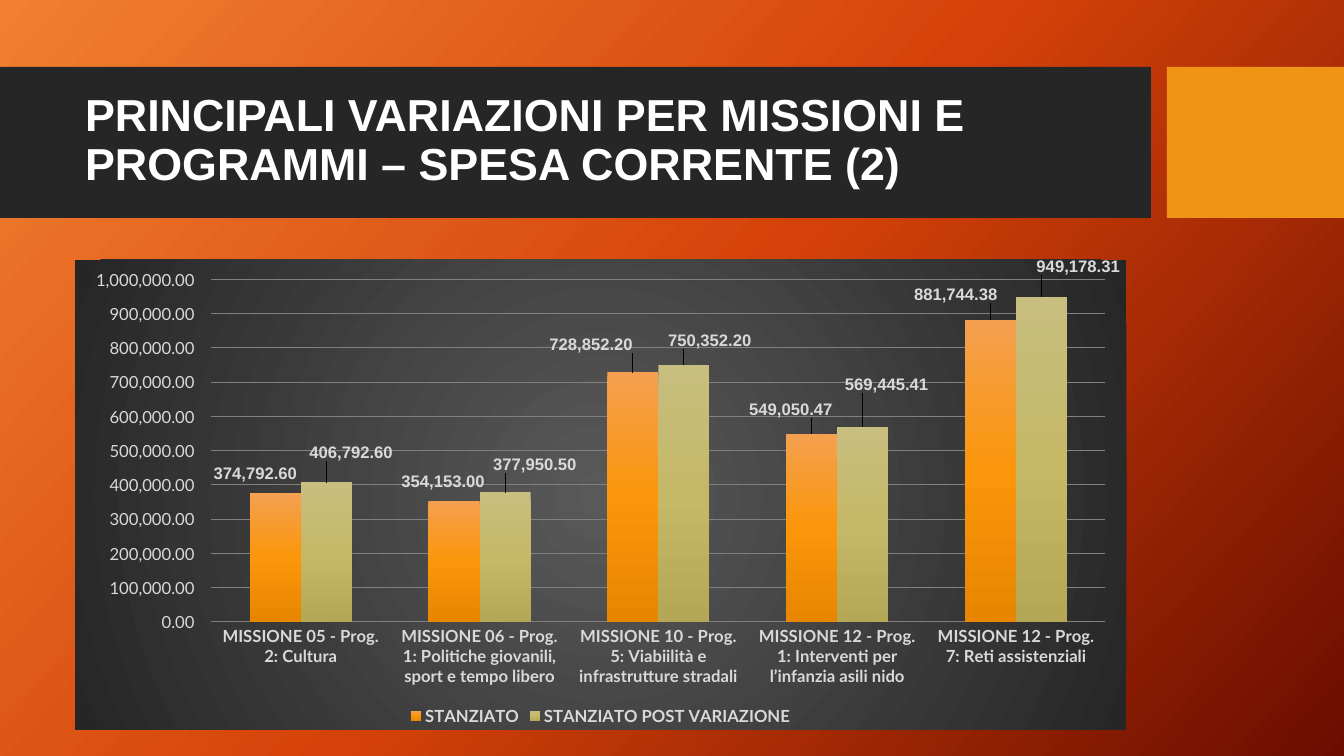
from pptx import Presentation
from pptx import util as u
from pptx.chart.data import CategoryChartData
from pptx.dml.color import RGBColor
from pptx.enum import chart as charts, shapes, text
from pptx.oxml import parse_xml
from pptx.oxml.ns import nsdecls

PX = 12192000 / 1344
DARK = RGBColor(0x26, 0x26, 0x26)
AMBER = RGBColor(0xF0, 0x94, 0x15)
WHITE = RGBColor(0xFF, 0xFF, 0xFF)
PALE = RGBColor(0xD9, 0xD9, 0xD9)
GRID = RGBColor(0x80, 0x80, 0x80)
ASH = RGBColor(0x59, 0x59, 0x59)
SUNSET = [(0, RGBColor(0xF1, 0x80, 0x31)), (50, RGBColor(0xD5, 0x42, 0x09)),
          (100, RGBColor(0x6A, 0x0D, 0x00))]
ORANGE = [(0, RGBColor(0xF4, 0xA0, 0x50)), (50, RGBColor(0xFB, 0x96, 0x0A)),
          (100, RGBColor(0xE8, 0x86, 0x00))]
OLIVE = [(0, RGBColor(0xC8, 0xBE, 0x7F)), (50, RGBColor(0xC5, 0xB8, 0x67)),
         (100, RGBColor(0xB4, 0xA7, 0x56))]

AMOUNT = r"#,##0.00\ _€"
TITLE = "PRINCIPALI VARIAZIONI PER MISSIONI E PROGRAMMI – SPESA CORRENTE (2)"
PROGRAMMES = [
    "MISSIONE 05 - Prog. 2: Cultura",
    "MISSIONE 06 - Prog. 1: Politiche giovanili, sport e tempo libero",
    "MISSIONE 10 - Prog. 5: Viabiilità e infrastrutture stradali",
    "MISSIONE 12 - Prog. 1: Interventi per l’infanzia asili nido",
    "MISSIONE 12 - Prog. 7: Reti assistenziali",
]
SERIES = [
    ("STANZIATO", [374792.6, 354153, 728852.2, 549050.47, 881744.38], ORANGE,
     [(-13, -7), (-4, -6), (-35, -15), (-14, -11), (-28, -12)]),
    ("STANZIATO POST VARIAZIONE",
     [406792.6, 377950.5, 750352.2, 569445.41, 949178.31], OLIVE,
     [(32, -17), (37, -15), (33, -11), (31, -29), (44, -17)]),
]


def emu(*lengths):
    """Turn px lengths into EMU."""
    return [u.Emu(round(length * PX)) for length in lengths]


def gradient(stops, angle=None):
    """Return a gradient fill: linear at an angle, or circular without one."""
    marks = "".join(f'<a:gs pos="{pos * 1000}"><a:srgbClr val="{color}"/></a:gs>'
                    for pos, color in stops)
    if angle is None:
        course = ('<a:path path="circle"><a:fillToRect l="50000" t="50000" '
                  'r="50000" b="50000"/></a:path>')
    else:
        course = f'<a:lin ang="{angle * 60000}" scaled="0"/>'
    return parse_xml(f'<a:gradFill {nsdecls("a")} rotWithShape="1">'
                     f'<a:gsLst>{marks}</a:gsLst>{course}</a:gradFill>')


def replace_solid(owner, fill, new_fill):
    """Put a gradient in the place of the owner's solid fill."""
    fill.solid()
    fill.fore_color.rgb = DARK
    solid = owner.xpath(".//a:solidFill")[0]
    solid.getparent().replace(solid, new_fill)


def style_font(font, name="Lato", size=12, color=PALE, bold=True):
    """Set the face, size, colour and weight of a font."""
    font.name, font.size, font.bold = name, u.Pt(size), bold
    font.color.rgb = color


def add_header(page, top, height):
    """Add the dark band, the amber block and the title over them."""
    title = page.shapes.title
    for left, width, color in ((0, 1151, DARK), (1167, 177, AMBER)):
        box = page.shapes.add_shape(shapes.MSO_SHAPE.RECTANGLE,
                                    *emu(left, top, width, height))
        box.shadow.inherit = False
        box.fill.solid()
        box.fill.fore_color.rgb = color
        box.line.fill.background()
        title.element.addprevious(box.element)
    title.left, title.top, title.width, title.height = emu(75, top + 15, 1059, height - 32)
    frame = title.text_frame
    frame.word_wrap = True
    frame.auto_size = text.MSO_AUTO_SIZE.NONE
    frame.vertical_anchor = text.MSO_ANCHOR.MIDDLE
    para = frame.paragraphs[0]
    para.alignment = text.PP_ALIGN.LEFT
    para.line_spacing = 0.9
    span = para.add_run()
    span.text = TITLE
    style_font(span.font, "Arial", 32, WHITE)


def style_axes(chart):
    """Format the category axis and the value axis."""
    for axis, bold in ((chart.category_axis, True), (chart.value_axis, False)):
        axis.major_tick_mark = axis.minor_tick_mark = charts.XL_TICK_MARK.NONE
        axis.format.line.fill.background()
        style_font(axis.tick_labels.font, bold=bold)
    values = chart.value_axis
    values.minimum_scale, values.maximum_scale, values.major_unit = 0, 1000000, 100000
    values.tick_labels.number_format = AMOUNT
    values.tick_labels.number_format_is_linked = False
    values.major_gridlines.format.line.color.rgb = GRID
    values.major_gridlines.format.line.width = u.Pt(0.75)


def place_labels(series, offsets, width, height):
    """Show the values, each label moved by its px offset."""
    labels = series.data_labels
    labels.show_value = True
    labels.number_format = AMOUNT
    labels.number_format_is_linked = False
    style_font(labels.font, "Arial")
    for index, (right, down) in enumerate(offsets):
        label = series.points[index].data_label
        style_font(label.font, "Arial")
        label.position = charts.XL_LABEL_POSITION.OUTSIDE_END
        mark = labels._element.xpath(f'c:dLbl/c:idx[@val="{index}"]')[0]
        mark.addnext(parse_xml(
            f'<c:numFmt {nsdecls("c")} formatCode="{AMOUNT}" sourceLinked="0"/>'))
        mark.addnext(parse_xml(
            f'<c:layout {nsdecls("c")}><c:manualLayout><c:x val="{right / width:.4f}"/>'
            f'<c:y val="{down / height:.4f}"/></c:manualLayout></c:layout>'))


def add_spending_chart(page, left, top, width, height):
    """Add the clustered columns of spending by programme."""
    data = CategoryChartData(number_format=AMOUNT)
    data.categories = PROGRAMMES
    for name, amounts, _, _ in SERIES:
        data.add_series(name, amounts)
    chart = page.shapes.add_chart(charts.XL_CHART_TYPE.COLUMN_CLUSTERED,
                                  *emu(left, top, width, height), data).chart
    style_font(chart.font, size=10, color=WHITE, bold=False)
    panel = parse_xml(f'<c:spPr {nsdecls("c", "a")}><a:ln><a:noFill/></a:ln></c:spPr>')
    panel.insert(0, gradient([(0, ASH), (100, DARK)]))
    chart.element.xpath("c:txPr")[0].addprevious(panel)
    chart.has_title = False
    chart.has_legend = True
    chart.legend.position = charts.XL_LEGEND_POSITION.BOTTOM
    chart.legend.include_in_layout = False
    style_font(chart.legend.font)
    style_axes(chart)
    plot = chart.plots[0]
    plot.vary_by_categories = False
    plot.gap_width, plot.overlap = 150, 0
    for series, (_, _, stops, offsets) in zip(plot.series, SERIES):
        replace_solid(series._element, series.format.fill, gradient(stops, 90))
        place_labels(series, offsets, width, height)


def main():
    """Build the slide and save the deck."""
    deck = Presentation()
    deck.slide_width, deck.slide_height = emu(1344, 756)
    page = deck.slides.add_slide(deck.slide_layouts[5])
    replace_solid(page.element, page.background.fill, gradient(SUNSET, 42))
    add_header(page, 67, 151)
    add_spending_chart(page, 75, 258, 1059, 472)
    deck.save("out.pptx")


if __name__ == "__main__":
    main()
